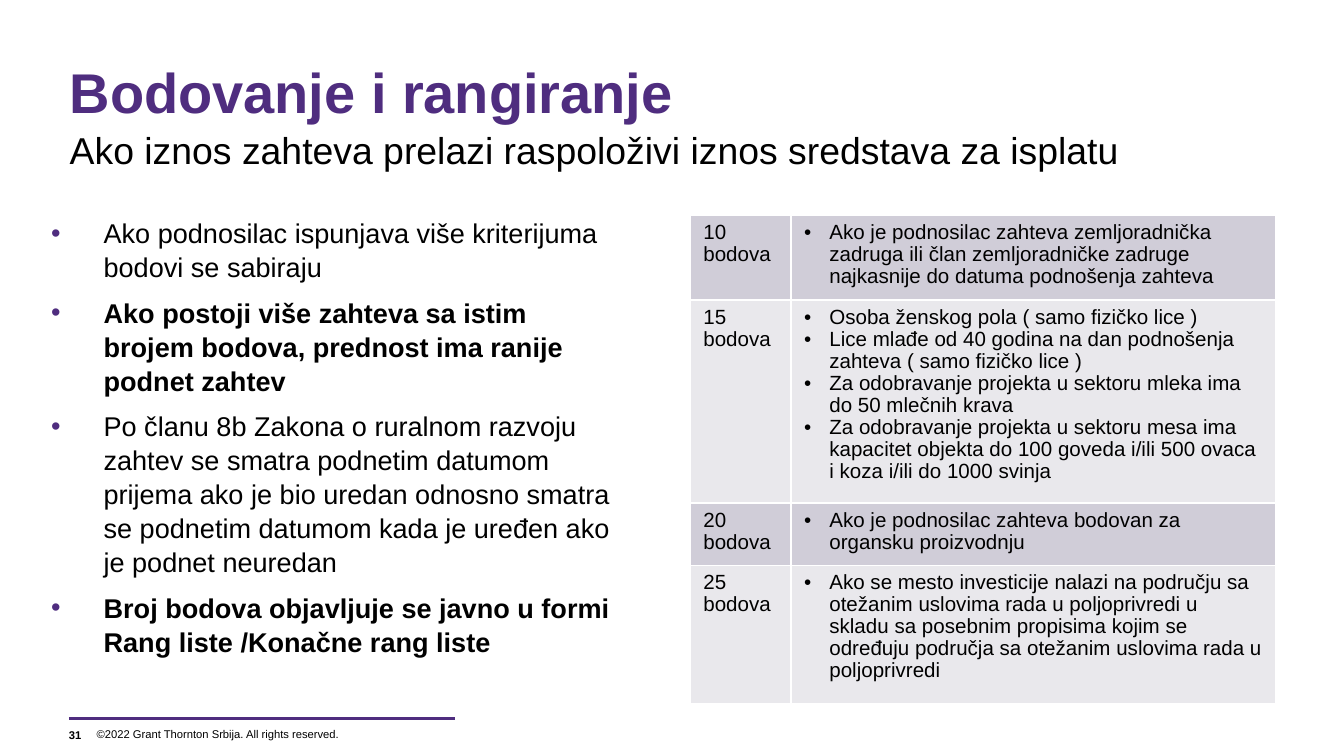
"""Build the slide on scoring and ranking of support requests."""
from lxml import etree
from pptx import Presentation
from pptx.dml.color import RGBColor
from pptx.enum import shapes, text
from pptx.oxml import ns
from pptx.util import Pt

THEME = {
    "font": "Arial", "accent": "4F2D7F", "ink": "000000", "line": "FFFFFF",
    "bands": ("D0CDD8", "E9E8EC"),
    "title": 30, "subtitle": 20, "body": 14.5, "table": 11, "footer": 6,
}
TITLE = "Bodovanje i rangiranje"
SUBTITLE = "Ako iznos zahteva prelazi raspoloživi iznos sredstava za isplatu"
RULES = [
    ("Ako podnosilac ispunjava više kriterijuma bodovi se sabiraju", False),
    ("Ako postoji više zahteva sa istim brojem bodova, prednost ima ranije podnet zahtev", True),
    ("Po članu 8b Zakona o ruralnom razvoju zahtev se smatra podnetim datumom prijema "
     "ako je bio uredan odnosno smatra se podnetim datumom kada je uređen ako je podnet "
     "neuredan", False),
    ("Broj bodova objavljuje se javno u formi Rang liste /Konačne rang liste", True),
]
SCORES = [
    ("10 bodova", 43.6, [
        "Ako je podnosilac zahteva zemljoradnička zadruga ili član zemljoradničke zadruge "
        "najkasnije do datuma podnošenja zahteva"]),
    ("15 bodova", 105.4, [
        "Osoba ženskog pola ( samo fizičko lice )",
        "Lice mlađe od 40 godina na dan podnošenja zahteva ( samo fizičko lice )",
        "Za odobravanje projekta u sektoru mleka ima do 50 mlečnih krava",
        "Za odobravanje projekta u sektoru mesa ima kapacitet objekta do 100 goveda i/ili "
        "500 ovaca i koza i/ili do 1000 svinja"]),
    ("20 bodova", 33.6, ["Ako je podnosilac zahteva bodovan za organsku proizvodnju"]),
    ("25 bodova", 74, [
        "Ako se mesto investicije nalazi na području sa otežanim uslovima rada u "
        "poljoprivredi u skladu sa posebnim propisima kojim se određuju područja sa "
        "otežanim uslovima rada u poljoprivredi"]),
]
COLUMNS = (54, 260)
FOOTER = [
    ("31", (36.9, 386.6, 14.4, 14.4), True),
    ("©2022 Grant Thornton Srbija. All rights reserved.", (51.8, 386.2, 190, 14.4), False),
]


def style(font, size, color="ink", bold=False):
    font.name, font.size, font.bold = THEME["font"], Pt(THEME[size]), bold
    font.color.rgb = RGBColor.from_string(THEME[color])


def place(part, left, top, width, height):
    part.left, part.top, part.width, part.height = map(Pt, (left, top, width, height))


def add_bullet(paragraph, indent, color):
    props = paragraph._p.get_or_add_pPr()
    props.set("marL", str(Pt(indent)))
    props.set("indent", str(-Pt(indent)))
    tint = etree.SubElement(props, ns.qn("a:buClr"))
    etree.SubElement(tint, ns.qn("a:srgbClr"), val=THEME[color])
    etree.SubElement(props, ns.qn("a:buFont"), typeface=THEME["font"])
    etree.SubElement(props, ns.qn("a:buChar"), char="•")


def add_borders(cell):
    props = cell._tc.get_or_add_tcPr()
    for side in ("lnL", "lnR", "lnT", "lnB"):
        border = etree.SubElement(props, ns.qn(f"a:{side}"), w=str(Pt(1)))
        paint = etree.SubElement(border, ns.qn("a:solidFill"))
        etree.SubElement(paint, ns.qn("a:srgbClr"), val=THEME["line"])


def clear_insets(frame):
    frame.margin_left = frame.margin_right = frame.margin_top = frame.margin_bottom = 0


def add_heading(title):
    place(title, 37.3, 28.1, 645.8, 66.2)
    frame = title.text_frame
    clear_insets(frame)
    frame.word_wrap, frame.auto_size = True, text.MSO_AUTO_SIZE.NONE
    frame.vertical_anchor = text.MSO_ANCHOR.TOP
    frame.text = f"{TITLE}\v{SUBTITLE}"
    heading = frame.paragraphs[0]
    heading.alignment, heading.line_spacing = text.PP_ALIGN.LEFT, 1.07
    name, detail = heading.runs
    style(name.font, "title", "accent", True)
    style(detail.font, "subtitle")


def add_rules(body):
    place(body, 20.2, 111.6, 313.9, 236.2)
    frame = body.text_frame
    frame.word_wrap, frame.auto_size = True, text.MSO_AUTO_SIZE.SHAPE_TO_FIT_TEXT
    frame.text = "\n".join(rule for rule, _ in RULES)
    for paragraph, (_, bold) in zip(frame.paragraphs, RULES):
        add_bullet(paragraph, 28.1, "accent")
        paragraph.line_spacing = 1.05
        paragraph.space_before, paragraph.space_after = Pt(0), Pt(6)
        style(paragraph.runs[0].font, "body", bold=bold)


def add_scores(slide):
    total = sum(height for _, height, _ in SCORES)
    scores = slide.shapes.add_table(
        len(SCORES), len(COLUMNS), Pt(369.6), Pt(115.5), Pt(sum(COLUMNS)), Pt(total)).table
    scores.first_row = scores.horz_banding = False
    for column, width in zip(scores.columns, COLUMNS):
        column.width = Pt(width)
    for index, (points, height, criteria) in enumerate(SCORES):
        scores.rows[index].height = Pt(height)
        for column, lines in enumerate(([points], criteria)):
            cell = scores.cell(index, column)
            add_borders(cell)
            cell.fill.solid()
            cell.fill.fore_color.rgb = RGBColor.from_string(THEME["bands"][index % 2])
            cell.text_frame.text = "\n".join(lines)
            for paragraph in cell.text_frame.paragraphs:
                if column:
                    add_bullet(paragraph, 13.5, "ink")
                paragraph.line_spacing = 0.96
                style(paragraph.runs[0].font, "table")


def add_footer(slide):
    rule = slide.shapes.add_connector(
        shapes.MSO_CONNECTOR.STRAIGHT, Pt(36.9), Pt(385), Pt(244), Pt(385))
    rule.line.color.rgb = RGBColor.from_string(THEME["accent"])
    rule.line.width = Pt(1.5)
    etree.SubElement(rule._element.spPr, ns.qn("a:effectLst"))
    for words, box, bold in FOOTER:
        frame = slide.shapes.add_textbox(*map(Pt, box)).text_frame
        clear_insets(frame)
        frame.word_wrap, frame.vertical_anchor = True, text.MSO_ANCHOR.MIDDLE
        frame.text = words
        style(frame.paragraphs[0].runs[0].font, "footer", bold=bold)


def main():
    deck = Presentation()
    deck.slide_width, deck.slide_height = Pt(720), Pt(405)
    slide = deck.slides.add_slide(deck.slide_layouts[1])
    add_heading(slide.shapes.title)
    add_rules(slide.placeholders[1])
    add_scores(slide)
    add_footer(slide)
    deck.save("out.pptx")


if __name__ == "__main__":
    main()
